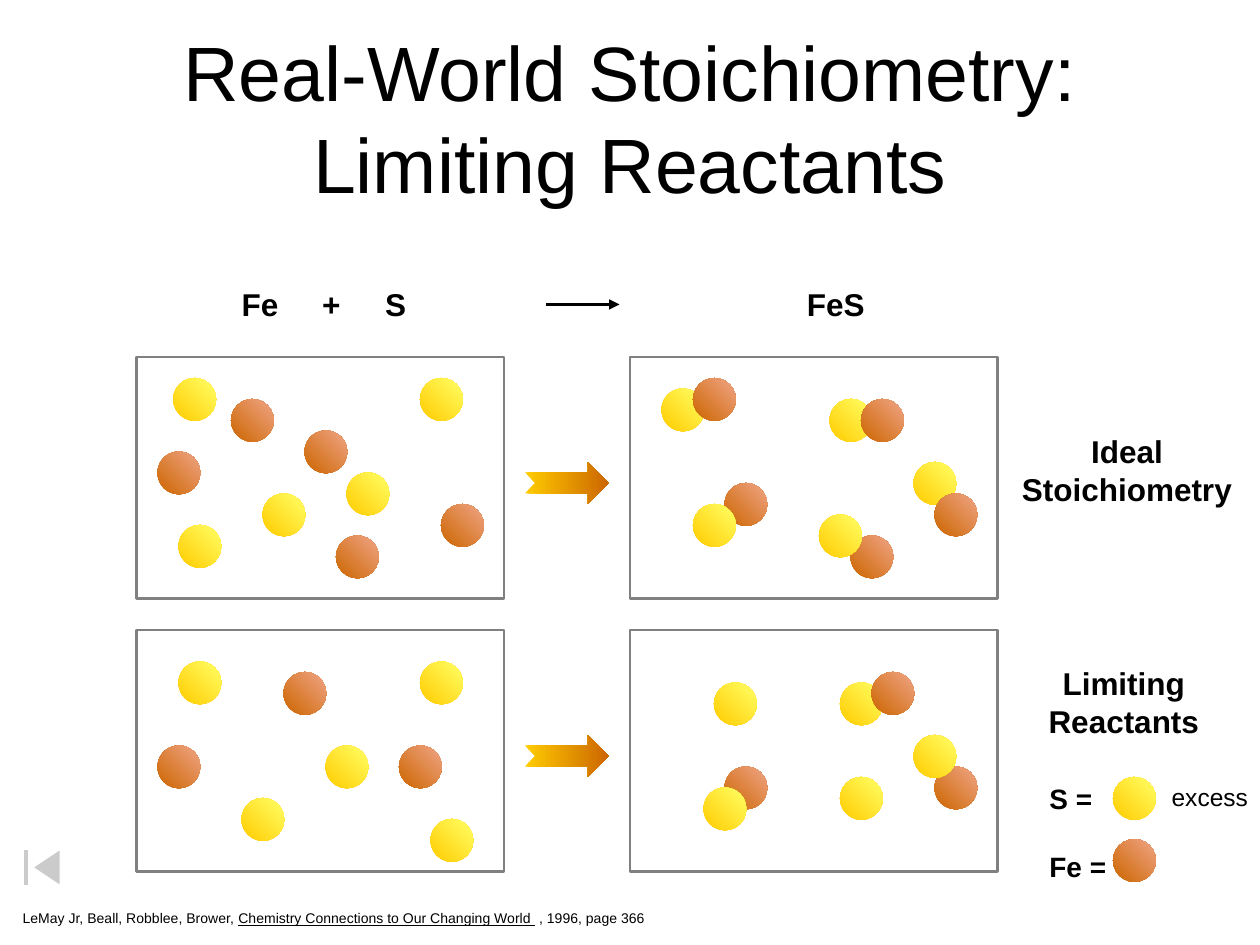
from lxml.etree import SubElement
from pptx import Presentation
from pptx.dml.color import RGBColor
from pptx.enum.shapes import MSO_CONNECTOR, MSO_SHAPE as Shape
from pptx.enum.text import MSO_ANCHOR, MSO_AUTO_SIZE, PP_ALIGN as Align
from pptx.oxml import parse_xml
from pptx.oxml.ns import nsdecls, qn
from pptx.util import Pt

TITLE = "Real-World Stoichiometry:\vLimiting Reactants"
EQUATION = "Fe\t+\tS\tFeS"
EQUATION_TABS = (46, 82, 323)
CREDIT = [
    ("LeMay Jr, Beall, Robblee, Brower, ", False),
    ("Chemistry Connections to Our Changing World ", True),
    (" , 1996, page 366", False),
]

# Gradients run from the first colour to the second
ATOM_COLORS = {"S": ("FFCC00", "FFFF66"), "Fe": ("CC6600", "F1A587")}
ARROW_COLORS = ("FFCC00", "CC6600")
ATOM_SIZE = 24.5
FRAME_WIDTH, FRAME_HEIGHT = 210, 138
FRAME_LEFTS = (78, 360)
FRAME_TOPS = (204, 360)

# One row per case: reactants, then products; atoms are placed within their frame
CASES = [
    (
        [("S", 21, 12), ("S", 162, 12), ("S", 72, 78), ("S", 24, 96), ("S", 120, 66),
         ("Fe", 54, 24), ("Fe", 12, 54), ("Fe", 114, 102), ("Fe", 96, 42), ("Fe", 174, 84)],
        [("S", 162, 60), ("Fe", 126, 102), ("Fe", 54, 72), ("S", 18, 18), ("S", 36, 84),
         ("S", 114, 24), ("S", 108, 90), ("Fe", 36, 12), ("Fe", 132, 24), ("Fe", 174, 78)],
    ),
    (
        [("S", 24, 18), ("S", 60, 96), ("S", 108, 66), ("S", 162, 18), ("S", 168, 108),
         ("Fe", 12, 66), ("Fe", 84, 24), ("Fe", 150, 66)],
        [("S", 48, 30), ("S", 120, 30), ("S", 120, 84), ("Fe", 138, 24), ("Fe", 54, 78),
         ("Fe", 174, 78), ("S", 42, 90), ("S", 162, 60)],
    ),
]
CASE_LABELS = [
    (["Ideal", "Stoichiometry"], (576.7, 243.4, 134.6, 50.4)),
    (["Limiting", "Reactants"], (591.8, 375.8, 100.8, 50.4)),
]
LEGEND = [("S", 636, 444), ("Fe", 636, 479.5)]


def color(code):
    return RGBColor.from_string(code)


def add_filled(slide, kind, box, colors, angle):
    """Add a borderless shape with a two-colour gradient."""
    shape = slide.shapes.add_shape(kind, *map(Pt, box))
    shape.shadow.inherit = False
    shape.line.fill.background()
    shape.fill.gradient()
    shape.fill.gradient_angle = angle
    for stop, code in zip(shape.fill.gradient_stops, colors):
        stop.color.rgb = color(code)


def add_atom(slide, element, left, top):
    add_filled(slide, Shape.OVAL, (left, top, ATOM_SIZE, ATOM_SIZE), ATOM_COLORS[element], 45)


def add_frame(slide, left, top):
    frame = slide.shapes.add_shape(
        Shape.RECTANGLE, Pt(left), Pt(top), Pt(FRAME_WIDTH), Pt(FRAME_HEIGHT))
    frame.shadow.inherit = False
    frame.fill.background()
    frame.line.color.rgb = color("808080")
    frame.line.width = Pt(1.5)


def style(para, size, bold=False, align=Align.LEFT):
    para.alignment = align
    para.font.name = "Arial"
    para.font.size = Pt(size)
    para.font.bold = bold
    para.font.color.rgb = color("000000")


def add_text(slide, lines, box, size, bold=False, align=Align.LEFT, gap=0):
    """Add unwrapped lines, one paragraph each, and return the paragraphs."""
    frame = slide.shapes.add_textbox(*map(Pt, box)).text_frame
    frame.word_wrap = False
    frame.auto_size = MSO_AUTO_SIZE.SHAPE_TO_FIT_TEXT
    frame.text = "\n".join(lines)
    for index, para in enumerate(frame.paragraphs):
        style(para, size, bold, align)
        if index and gap:
            para.space_before = Pt(gap)
    return frame.paragraphs


def add_title(slide):
    title = slide.shapes.title
    title.left, title.top, title.width, title.height = map(Pt, (36, 21.6, 648, 90))
    frame = title.text_frame
    frame.text = TITLE
    frame.auto_size = MSO_AUTO_SIZE.NONE
    frame.vertical_anchor = MSO_ANCHOR.MIDDLE
    style(frame.paragraphs[0], 44, align=Align.CENTER)


def add_equation(slide):
    para = add_text(slide, [EQUATION], (131, 159.1, 370.8, 28.8), 18, bold=True)[0]
    tabs = parse_xml(f"<a:tabLst {nsdecls('a')}/>")
    for position in EQUATION_TABS:
        SubElement(tabs, qn("a:tab"), pos=str(Pt(position)), algn="l")
    para._p.get_or_add_pPr().insert(0, tabs)

    arrow = slide.shapes.add_connector(
        MSO_CONNECTOR.STRAIGHT, Pt(312), Pt(174), Pt(354), Pt(174))
    arrow.line.color.rgb = color("000000")
    arrow.line.width = Pt(1.75)
    SubElement(arrow.line._get_or_add_ln(), qn("a:tailEnd"), type="triangle")
    SubElement(arrow._element.spPr, qn("a:effectLst"))


def add_back_button(slide):
    button = slide.shapes.add_shape(
        Shape.ACTION_BUTTON_BEGINNING, Pt(0), Pt(481.7), Pt(48), Pt(28))
    button.shadow.inherit = False
    button.fill.solid()
    button.fill.fore_color.rgb = color("FFFFFF")
    fill_color = button._element.spPr.find(qn("a:solidFill"))[0]
    SubElement(fill_color, qn("a:alpha"), val="50000")
    button.line.color.rgb = color("FFFFFF")
    button.line.width = Pt(0.75)


def add_credit(slide):
    para = add_text(slide, [""], (5.8, 516.2, 371.5, 16.6), 8)[0]
    for text, underlined in CREDIT:
        span = para.add_run()
        span.text = text
        span.font.underline = underlined


def main():
    deck = Presentation()
    deck.slide_width, deck.slide_height = Pt(720), Pt(540)
    slide = deck.slides.add_slide(deck.slide_layouts[5])

    add_title(slide)
    add_back_button(slide)
    add_credit(slide)
    add_equation(slide)

    for top, case, (label, label_box) in zip(FRAME_TOPS, CASES, CASE_LABELS):
        for left, atoms in zip(FRAME_LEFTS, case):
            add_frame(slide, left, top)
            for element, x, y in atoms:
                add_atom(slide, element, left + x, top + y)
        add_filled(slide, Shape.NOTCHED_RIGHT_ARROW, (300, top + 60, 48, 24), ARROW_COLORS, 0)
        add_text(slide, label, label_box, 18, bold=True, align=Align.CENTER)

    for element, left, top in LEGEND:
        add_atom(slide, element, left, top)
    legend_names = [f"{element} =" for element, _, _ in LEGEND]
    add_text(slide, legend_names, (592.6, 442.8, 51.8, 64.8), 16, bold=True, gap=20)
    add_text(slide, ["excess"], (662.4, 443.5, 58.3, 23.8), 14)

    deck.save("out.pptx")


if __name__ == "__main__":
    main()
